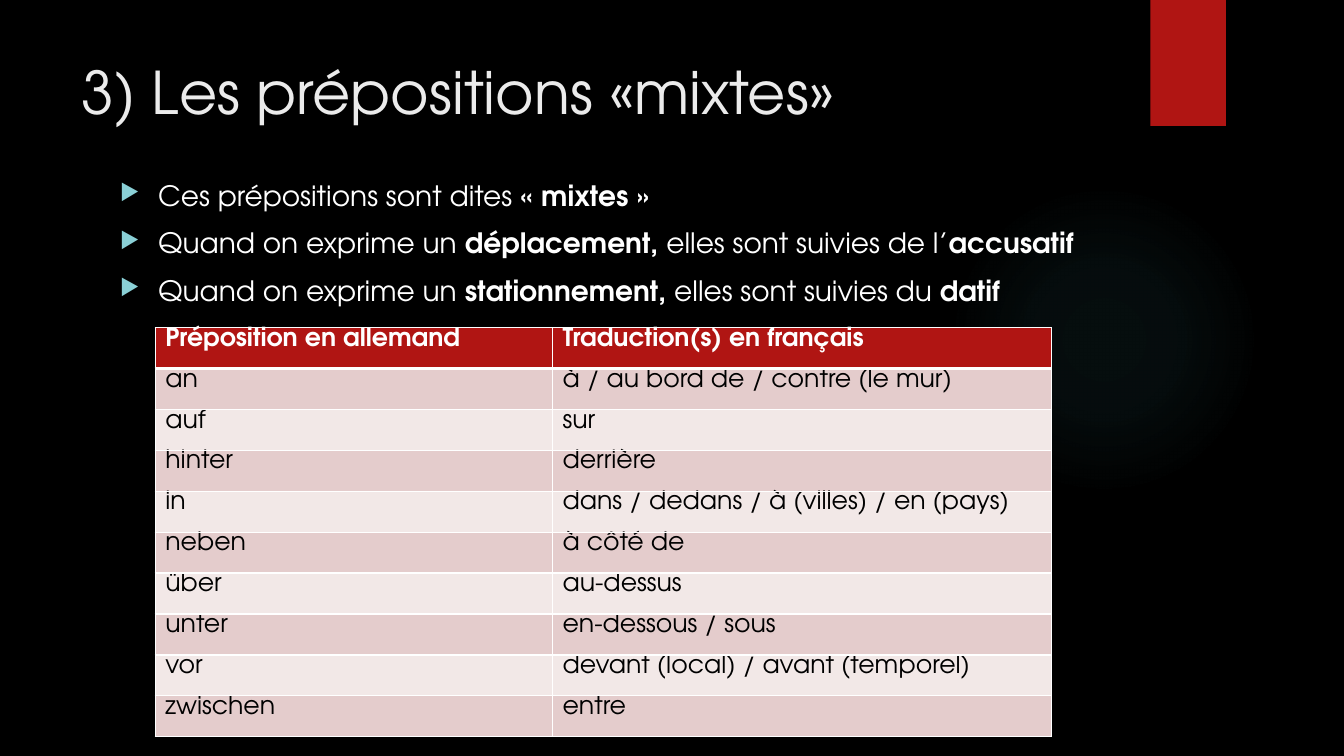
from dataclasses import dataclass
from itertools import product

from lxml.etree import SubElement
from pptx import Presentation
from pptx.dml.color import RGBColor
from pptx.enum.shapes import MSO_SHAPE as Preset
from pptx.oxml import parse_xml
from pptx.oxml.ns import qn
from pptx.util import Inches, Pt

FONT = "TeX Gyre Adventor"
BLACK, WHITE, RED = "000000", "FFFFFF", "B01513"
BANDS = ("F2E8E7", "E4CCCC")
DRAWING_NS = 'xmlns:a="http://schemas.openxmlformats.org/drawingml/2006/main"'


@dataclass(frozen=True)
class Box:
    left: float
    top: float
    width: float
    height: float

    def lengths(self) -> tuple:
        return tuple(Inches(v) for v in (self.left, self.top, self.width, self.height))


@dataclass(frozen=True)
class Phrase:
    text: str
    bold: bool = False


@dataclass(frozen=True)
class Preposition:
    german: str
    french: str


RULES = (
    (Phrase("Ces prépositions sont dites"), Phrase(" « mixtes »", True)),
    (Phrase("Quand on exprime un "), Phrase("déplacement, ", True),
     Phrase("elles sont suivies de l’"), Phrase("accusatif", True)),
    (Phrase("Quand on exprime un "), Phrase("stationnement, ", True),
     Phrase("elles sont suivies du "), Phrase("datif", True)),
)
PREPOSITIONS = (
    Preposition("Préposition en allemand", "Traduction(s) en français"),
    Preposition("an", "à / au bord de / contre (le mur)"),
    Preposition("auf", "sur"),
    Preposition("hinter", "derrière"),
    Preposition("in", "dans / dedans / à (villes) / en (pays)"),
    Preposition("neben", "à côté de"),
    Preposition("über", "au-dessus"),
    Preposition("unter", "en-dessous / sous"),
    Preposition("vor", "devant (local) / avant (temporel)"),
    Preposition("zwischen", "entre"),
)
COLUMN_WIDTHS = (3.94, 4.95)
ROW_HEIGHT = 0.406


def rgb(color: str) -> RGBColor:
    return RGBColor.from_string(color)


def format_run(run, size: float, color: str, bold: bool = False) -> None:
    run.font.name = FONT
    run.font.size = Pt(size)
    run.font.bold = bold
    run.font.color.rgb = rgb(color)


def add_plain_shape(slide, preset: Preset, box: Box):
    shape = slide.shapes.add_shape(preset, *box.lengths())
    shape.line.fill.background()
    return shape


def add_glow(slide, box: Box) -> None:
    glow = add_plain_shape(slide, Preset.OVAL, box)
    glow.shadow.inherit = False
    stops = "".join(
        f'<a:gs pos="{pos * 1000}"><a:srgbClr val="50B9C1">'
        f'<a:alpha val="{alpha * 1000}"/></a:srgbClr></a:gs>'
        for pos, alpha in ((0, 7), (36, 6), (69, 0))
    )
    gradient = parse_xml(
        f'<a:gradFill {DRAWING_NS} rotWithShape="1"><a:gsLst>{stops}</a:gsLst>'
        '<a:path path="circle"><a:fillToRect l="50000" t="50000" r="50000" b="50000"/>'
        '</a:path></a:gradFill>'
    )
    glow.element.spPr.find(qn("a:prstGeom")).addnext(gradient)


def add_ribbon(slide, box: Box) -> None:
    ribbon = add_plain_shape(slide, Preset.RECTANGLE, box)
    ribbon.fill.solid()
    ribbon.fill.fore_color.rgb = rgb(RED)
    ribbon.element.spPr.append(parse_xml(
        f'<a:effectLst {DRAWING_NS}><a:outerShdw blurRad="{Pt(3)}" dist="{Pt(2)}" '
        f'dir="5400000" rotWithShape="0"><a:srgbClr val="{BLACK}">'
        '<a:alpha val="45000"/></a:srgbClr></a:outerShdw></a:effectLst>'
    ))


def add_text_frame(slide, box: Box):
    frame = slide.shapes.add_textbox(*box.lengths()).text_frame
    frame.word_wrap = True
    return frame


def add_title(slide, box: Box) -> None:
    paragraph = add_text_frame(slide, box).paragraphs[0]
    paragraph.text = "3) Les prépositions «mixtes»"
    format_run(paragraph.runs[0], 42, "EBEBEB")


def add_bullet(paragraph) -> None:
    properties = paragraph._p.get_or_add_pPr()
    properties.set("marL", str(Inches(0.38)))
    properties.set("indent", str(-Inches(0.38)))
    bullet_color = SubElement(properties, qn("a:buClr"))
    SubElement(bullet_color, qn("a:srgbClr"), val="8AD0D6")
    SubElement(properties, qn("a:buSzPct"), val="80000")
    SubElement(properties, qn("a:buChar"), char="▶")


def add_rules(slide, box: Box) -> None:
    frame = add_text_frame(slide, box)
    for index, phrases in enumerate(RULES):
        paragraph = frame.add_paragraph() if index else frame.paragraphs[0]
        add_bullet(paragraph)
        paragraph.space_before = Pt(10 if index else 0)
        for phrase in phrases:
            run = paragraph.add_run()
            run.text = phrase.text
            format_run(run, 20, WHITE, phrase.bold)


def set_borders(cell, top: float, bottom: float) -> None:
    properties = cell._tc.get_or_add_tcPr()
    for index, (side, width) in enumerate(zip("LRTB", (1, 1, top, bottom))):
        properties.insert(index, parse_xml(
            f'<a:ln{side} {DRAWING_NS} w="{Pt(width)}"><a:solidFill>'
            f'<a:srgbClr val="{WHITE}"/></a:solidFill></a:ln{side}>'
        ))


def add_preposition_table(slide, box: Box) -> None:
    table = slide.shapes.add_table(
        len(PREPOSITIONS), len(COLUMN_WIDTHS), *box.lengths()
    ).table
    for column, width in zip(table.columns, COLUMN_WIDTHS):
        column.width = Inches(width)
    for row in table.rows:
        row.height = Inches(ROW_HEIGHT)
    for row, column in product(range(len(PREPOSITIONS)), range(len(COLUMN_WIDTHS))):
        entry = PREPOSITIONS[row]
        header = row == 0
        cell = table.cell(row, column)
        cell.margin_top = cell.margin_bottom = 0
        cell.fill.solid()
        cell.fill.fore_color.rgb = rgb(RED if header else BANDS[row % 2])
        set_borders(cell, 3 if row == 1 else 1, 3 if header else 1)
        cell.text_frame.text = (entry.german, entry.french)[column]
        format_run(cell.text_frame.paragraphs[0].runs[0], 18,
                   WHITE if header else BLACK, header)


def main() -> None:
    deck = Presentation()
    deck.slide_width, deck.slide_height = Inches(13.33), Inches(7.5)
    slide = deck.slides.add_slide(deck.slide_layouts[6])
    slide.background.fill.solid()
    slide.background.fill.fore_color.rgb = rgb(BLACK)
    add_glow(slide, Box(9.41, 1.83, 3.08, 3.08))
    add_ribbon(slide, Box(11.41, 0, 0.75, 1.25))
    add_title(slide, Box(0.71, 0.5, 10.29, 1.53))
    add_rules(slide, Box(1.09, 1.72, 9.78, 4.59))
    add_preposition_table(
        slide, Box(1.54, 3.25, sum(COLUMN_WIDTHS), ROW_HEIGHT * len(PREPOSITIONS))
    )
    deck.save("out.pptx")


if __name__ == "__main__":
    main()
